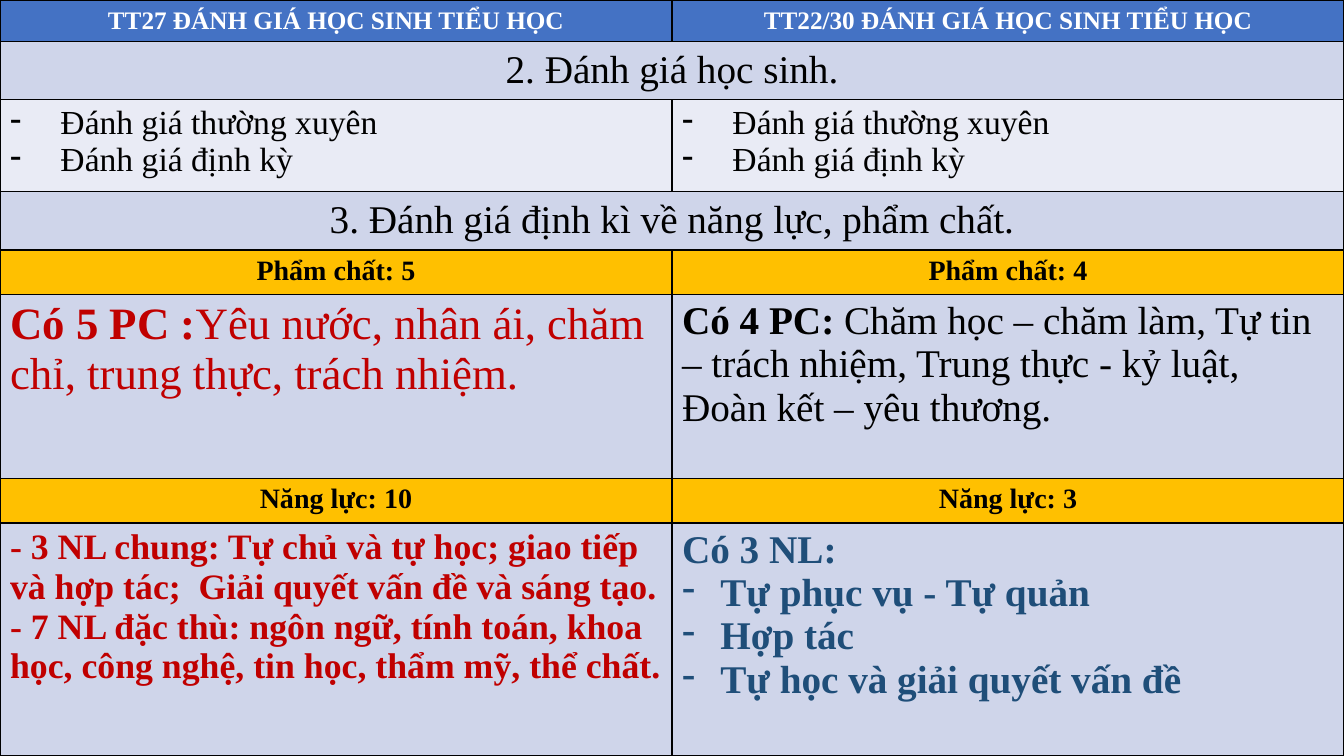
from lxml import etree
from pptx import Presentation
from pptx.dml.color import RGBColor
from pptx.enum.text import MSO_ANCHOR, PP_ALIGN
from pptx.oxml.ns import qn
from pptx.util import Inches, Pt

CENTER, LEFT = PP_ALIGN.CENTER, PP_ALIGN.LEFT
TOP, MIDDLE = MSO_ANCHOR.TOP, MSO_ANCHOR.MIDDLE
BLANK_LAYOUT = 6
WIDTH, HEIGHT = 13.33, 7.5

BLACK = RGBColor(0x00, 0x00, 0x00)
WHITE = RGBColor(0xFF, 0xFF, 0xFF)
BLUE = RGBColor(0x44, 0x72, 0xC4)
BAND = RGBColor(0xCF, 0xD5, 0xEA)
PALE = RGBColor(0xE9, 0xEB, 0xF5)
GOLD = RGBColor(0xFF, 0xC0, 0x00)
RED = RGBColor(0xC0, 0x00, 0x00)
NAVY = RGBColor(0x1F, 0x4E, 0x79)


def add_text(paragraph, text, size=28, color=BLACK, bold=False, font="Times New Roman"):
    run = paragraph.add_run()
    run.text = text
    run.font.name = font
    run.font.size = Pt(size)
    run.font.bold = bold
    run.font.color.rgb = color


def add_dash(paragraph, indent):
    properties = paragraph._p.get_or_add_pPr()
    properties.set("marL", str(Inches(indent)))
    properties.set("indent", str(-Inches(indent)))
    etree.SubElement(properties, qn("a:buFontTx"))
    etree.SubElement(properties, qn("a:buChar")).set("char", "-")


class ComparisonSlide:
    def __init__(self, presentation, border_color=BLACK, border_width=1):
        self.slide = presentation.slides.add_slide(presentation.slide_layouts[BLANK_LAYOUT])
        self.border_color = border_color
        self.border_width = border_width

    def add_table(self, row_heights, column_count):
        shape = self.slide.shapes.add_table(
            len(row_heights), column_count, 0, 0, Inches(WIDTH), Inches(HEIGHT))
        self.table = shape.table
        for column in self.table.columns:
            column.width = Inches(WIDTH / column_count)
        for row, height in zip(self.table.rows, row_heights):
            row.height = Inches(height)

    def add_borders(self, cell):
        properties = cell._tc.get_or_add_tcPr()
        for position, side in enumerate(("lnL", "lnR", "lnT", "lnB")):
            line = etree.Element(qn(f"a:{side}"), w=str(Pt(self.border_width)))
            fill = etree.SubElement(line, qn("a:solidFill"))
            etree.SubElement(fill, qn("a:srgbClr")).set("val", str(self.border_color))
            properties.insert(position, line)

    def fill_cell(self, row, column, paragraphs, fill, align=LEFT, anchor=TOP, dash=0.5, **style):
        cell = self.table.cell(row, column)
        cell.fill.solid()
        cell.fill.fore_color.rgb = fill
        cell.vertical_anchor = anchor
        self.add_borders(cell)
        for index, (dashed, *runs) in enumerate(paragraphs):
            frame = cell.text_frame
            paragraph = frame.add_paragraph() if index else frame.paragraphs[0]
            paragraph.alignment = align
            if dashed:
                add_dash(paragraph, dash)
            for text, run_style in runs:
                add_text(paragraph, text, **{**style, **run_style})

    def fill_row(self, row, texts, fill, **style):
        for column, text in enumerate(texts):
            self.fill_cell(row, column, [(False, (text, {}))], fill, align=CENTER, **style)

    def fill_section(self, row, text):
        self.table.cell(row, 0).merge(self.table.cell(row, 1))
        self.fill_cell(row, 0, [(False, (text, {}))], BAND, align=CENTER, anchor=MIDDLE)
        self.fill_cell(row, 1, [], BAND)


def main():
    presentation = Presentation()
    presentation.slide_width = Inches(WIDTH)
    presentation.slide_height = Inches(HEIGHT)
    comparison = ComparisonSlide(presentation)
    comparison.add_table([0.41, 0.58, 0.91, 0.58, 0.44, 1.83, 0.44, 2.31], 2)

    comparison.fill_row(
        0, ["TT27 ĐÁNH GIÁ HỌC SINH TIỂU HỌC", "TT22/30 ĐÁNH GIÁ HỌC SINH TIỂU HỌC"],
        BLUE, anchor=MIDDLE, size=18, color=WHITE, bold=True)
    comparison.fill_section(1, "2. Đánh giá học sinh.")
    assessments = [(True, (text, {})) for text in ("Đánh giá thường xuyên", "Đánh giá định kỳ")]
    for column in range(2):
        comparison.fill_cell(2, column, assessments, PALE, size=24)
    comparison.fill_section(3, "3. Đánh giá định kì về năng lực, phẩm chất.")

    comparison.fill_row(4, ["Phẩm chất: 5", "Phẩm chất: 4"], GOLD, size=20, bold=True)
    qualities = [
        ("Có 5 PC :", "Yêu nước, nhân ái, chăm chỉ, trung thực, trách nhiệm.", 32, RED),
        ("Có 4 PC: ", "Chăm học – chăm làm, Tự tin – trách nhiệm, Trung thực - kỷ luật, "
                      "Đoàn kết – yêu thương.", 28, BLACK),
    ]
    for column, (label, detail, size, color) in enumerate(qualities):
        comparison.fill_cell(5, column, [(False, (label, {"bold": True}), (detail, {}))],
                             BAND, size=size, color=color)

    comparison.fill_row(6, ["Năng lực: 10", "Năng lực: 3"], GOLD, size=20, bold=True)
    general_and_specific = [
        "- 3 NL chung: Tự chủ và tự học; giao tiếp và hợp tác;  Giải quyết vấn đề và sáng tạo.",
        "- 7 NL đặc thù: ngôn ngữ, tính toán, khoa học, công nghệ, tin học, thẩm mỹ, thể chất.",
    ]
    comparison.fill_cell(7, 0, [(False, (text, {})) for text in general_and_specific],
                         BAND, size=25.5, color=RED, bold=True)
    competences = ["Có 3 NL:", "Tự phục vụ - Tự quản", "Hợp tác", "Tự học và giải quyết vấn đề"]
    comparison.fill_cell(7, 1, [(index > 0, (text, {})) for index, text in enumerate(competences)],
                         BAND, dash=0.38, color=NAVY, bold=True)
    presentation.save("out.pptx")


if __name__ == "__main__":
    main()
